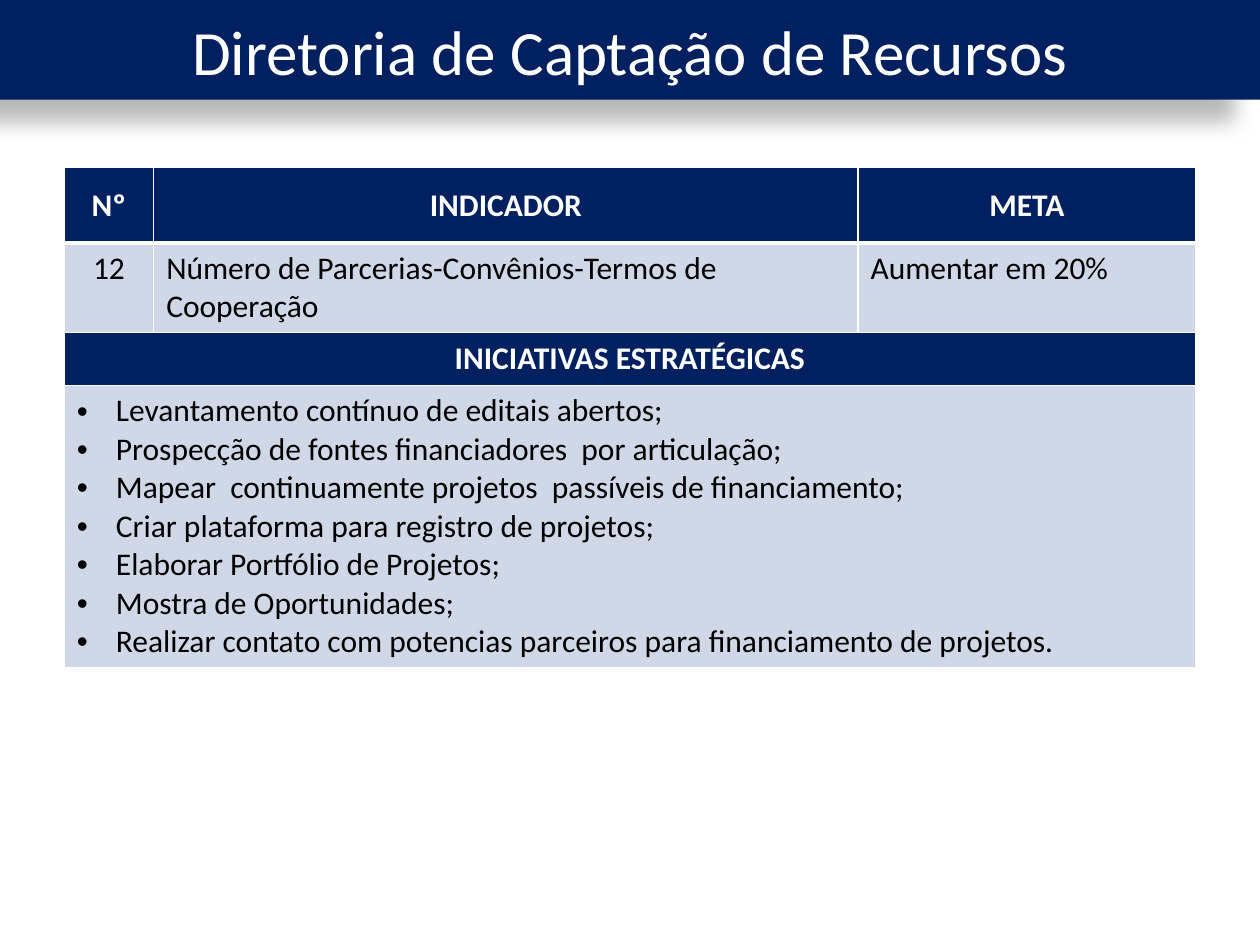
from lxml import etree
from pptx import Presentation
from pptx.dml.color import RGBColor
from pptx.enum.shapes import MSO_SHAPE
from pptx.enum.text import MSO_ANCHOR, PP_ALIGN
from pptx.oxml.ns import qn
from pptx.util import Inches, Pt

RECTANGLE = MSO_SHAPE.RECTANGLE
TOP, MIDDLE = MSO_ANCHOR.TOP, MSO_ANCHOR.MIDDLE
LEFT, CENTER = PP_ALIGN.LEFT, PP_ALIGN.CENTER
NAVY, PALE, WHITE, BLACK = "002060", "D0D8E8", "FFFFFF", "000000"
COLUMNS = [0.71, 5.59, 2.68]
ROWS = [0.6, 0.67, 0.42, 2.23]
INDENT = Inches(0.31)


def color(value):
    return RGBColor.from_string(value)


def write(frame, text, size=18, ink=BLACK, bold=False, align=LEFT, bullet=False):
    frame.text = text
    for para in frame.paragraphs:
        para.alignment = align
        if bullet:
            props = para._p.get_or_add_pPr()
            props.set("marL", str(INDENT))
            props.set("indent", str(-INDENT))
            etree.SubElement(props, qn("a:buFont"), typeface="Arial")
            etree.SubElement(props, qn("a:buChar"), char="•")
        for span in para.runs:
            span.font.name = "Calibri"
            span.font.size = Pt(size)
            span.font.bold = bold
            span.font.color.rgb = color(ink)


deck = Presentation()
deck.slide_width, deck.slide_height = Inches(10), Inches(7.5)
page = deck.slides.add_slide(deck.slide_layouts[6])

initiatives = "\n".join([
    "Levantamento contínuo de editais abertos;",
    "Prospecção de fontes financiadores  por articulação;",
    "Mapear  continuamente projetos  passíveis de financiamento;",
    "Criar plataforma para registro de projetos;",
    "Elaborar Portfólio de Projetos;",
    "Mostra de Oportunidades;",
    "Realizar contato com potencias parceiros para financiamento de projetos.",
])
heading = {"ink": WHITE, "bold": True, "align": CENTER}
content = [
    [("Nº", heading), ("INDICADOR", heading), ("META", heading)],
    [("12", {"align": CENTER}),
     ("Número de Parcerias-Convênios-Termos de Cooperação", {}),
     ("Aumentar em 20%", {})],
    [("INICIATIVAS ESTRATÉGICAS", heading)],
    [(initiatives, {"bullet": True})],
]

table = page.shapes.add_table(
    len(ROWS), len(COLUMNS), Inches(0.51), Inches(1.33),
    Inches(sum(COLUMNS)), Inches(sum(ROWS))).table
table.horz_banding = False
for column, width in zip(table.columns, COLUMNS):
    column.width = Inches(width)
for row, height in zip(table.rows, ROWS):
    row.height = Inches(height)

for row_index, entries in enumerate(content):
    if len(entries) == 1:
        table.cell(row_index, 0).merge(table.cell(row_index, len(COLUMNS) - 1))
    for column_index in range(len(COLUMNS)):
        cell = table.cell(row_index, column_index)
        props = cell._tc.get_or_add_tcPr()
        for side in ("lnL", "lnR", "lnT", "lnB"):
            thick = (row_index, side) in ((0, "lnB"), (1, "lnT"))
            line = etree.SubElement(props, qn(f"a:{side}"), w=str(Pt(3 if thick else 1)))
            paint = etree.SubElement(line, qn("a:solidFill"))
            etree.SubElement(paint, qn("a:srgbClr"), val=WHITE)
        cell.fill.solid()
        cell.fill.fore_color.rgb = color(PALE if row_index % 2 else NAVY)
        cell.vertical_anchor = MIDDLE if row_index == 0 else TOP
    for column_index, (text, style) in enumerate(entries):
        write(table.cell(row_index, column_index).text_frame, text, **style)

banner = page.shapes.add_shape(RECTANGLE, 0, 0, deck.slide_width, Inches(0.79))
banner.fill.solid()
banner.fill.fore_color.rgb = color(NAVY)
banner.line.fill.background()
banner.shadow.inherit = False
effects = banner._element.spPr.find(qn("a:effectLst"))
shadow = etree.SubElement(
    effects, qn("a:outerShdw"), blurRad=str(Pt(11.8)), dist=str(Pt(19.7)),
    dir=str(141 * 60000), algn="ctr", rotWithShape="0")
shade = etree.SubElement(shadow, qn("a:srgbClr"), val=BLACK)
etree.SubElement(shade, qn("a:alpha"), val="28000")
banner.text_frame.word_wrap = True
banner.text_frame.vertical_anchor = MIDDLE
write(banner.text_frame, "Diretoria de Captação de Recursos", size=36, ink=WHITE, align=CENTER)

deck.save("out.pptx")
